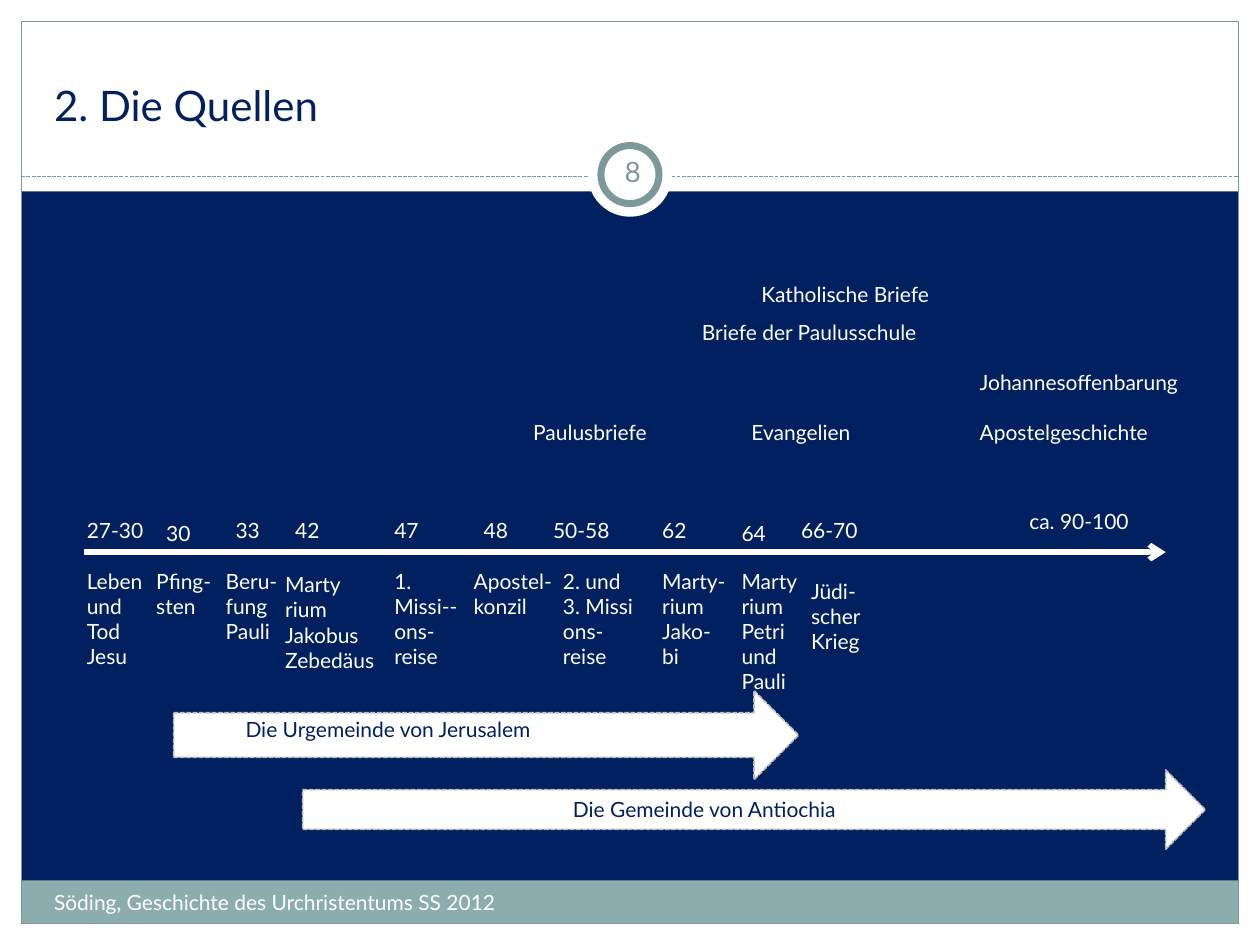
import pptx
import pptx.dml.color
import pptx.enum.dml
import pptx.enum.shapes
import pptx.enum.text
import pptx.oxml.ns
import pptx.util
from lxml import etree

Cm, Pt = pptx.util.Cm, pptx.util.Pt
SHAPE = pptx.enum.shapes.MSO_SHAPE
ANCHOR = pptx.enum.text.MSO_ANCHOR
ALIGN = pptx.enum.text.PP_ALIGN
DASH = pptx.enum.dml.MSO_LINE.SQUARE_DOT  # written to the file as sysDash

WIDTH, HEIGHT, MARGIN = 25.4, 19.05, 0.43
HEADER = 3.86
NAVY, WHITE, TEAL, SAGE, GREY = "002060", "FFFFFF", "7C999A", "8CADAE", "BDBDBD"

# left, top, width, text
YEARS = [
    (1.5, 10.31, 2.4, "27-30"),
    (3.1, 10.36, 1.4, "30"),
    (4.5, 10.31, 2.6, "33"),
    (5.7, 10.31, 1.4, "42"),
    (7.7, 10.31, 1.4, "47"),
    (9.5, 10.31, 2.2, "48"),
    (10.9, 10.31, 3.2, "50-58"),
    (13.1, 10.31, 4.2, "62"),
    (14.7, 10.36, 1.0, "64"),
    (15.9, 10.31, 2.0, "66-70"),
    (20.5, 10.13, 3.6, "ca. 90-100"),
]
WRITINGS = [
    (15.1, 5.56, 5.4, "Katholische Briefe"),
    (13.9, 6.32, 6.6, "Briefe der Paulusschule"),
    (19.5, 7.32, 4.8, "Johannesoffenbarung"),
    (10.5, 8.33, 6.4, "Paulusbriefe"),
    (14.9, 8.33, 4.0, "Evangelien"),
    (19.5, 8.33, 6.4, "Apostelgeschichte"),
]
# left, top, width, text, number of lines
EVENTS = [
    (1.5, 11.33, 1.8, "Leben und\nTod Jesu", 4),
    (2.9, 11.33, 1.8, "Pfing-\nsten", 2),
    (4.3, 11.33, 1.8, "Beru-\nfung\nPauli", 3),
    (5.5, 11.4, 2.4, "Marty\nrium Jakobus Zebedäus", 4),
    (7.7, 11.33, 2.2, "1.\nMissi--\nons-\nreise", 4),
    (9.3, 11.33, 2.6, "Apostel-konzil", 2),
    (11.1, 11.33, 2.2, "2. und\n3. Missi\nons-\nreise", 4),
    (13.1, 11.33, 2.2, "Marty-\nrium\nJako-\nbi", 4),
    (14.7, 11.33, 2.0, "Marty\nrium\nPetri\nund\nPauli", 5),
    (16.1, 11.53, 1.8, "Jüdi-scher Krieg", 3),
]
# arrow box, then label box
COMMUNITIES = [
    ((3.5, 13.92, 12.6, 1.8), (4.7, 14.33, 8.4, "Die Urgemeinde von Jerusalem")),
    ((6.1, 15.52, 18.2, 1.6), (11.3, 15.93, 6.0, "Die Gemeinde von Antiochia")),
]


def rgb(value):
    return pptx.dml.color.RGBColor.from_string(value)


class Slide:
    """Adds styled elements to one slide; all lengths are in centimetres."""

    font = "Lato"
    size = 12

    def __init__(self, s):
        self.s = s

    def background(self, color):
        fill = self.s.background.fill
        fill.solid()
        fill.fore_color.rgb = rgb(color)

    def stroke(self, line, color, width, dash=None):
        line.color.rgb = rgb(color)
        line.width = Pt(width)
        if dash is not None:
            line.dash_style = dash

    def shape(self, kind, x, y, w, h, fill=None, line=None, width=0.75, dash=None):
        sp = self.s.shapes.add_shape(kind, Cm(x), Cm(y), Cm(w), Cm(h))
        sp.shadow.inherit = False
        if fill:
            sp.fill.solid()
            sp.fill.fore_color.rgb = rgb(fill)
        else:
            sp.fill.background()
        if line:
            self.stroke(sp.line, line, width, dash)
        else:
            sp.line.fill.background()

    def line(self, x1, y1, x2, y2, color, width, dash=None, arrow=False):
        straight = pptx.enum.shapes.MSO_CONNECTOR.STRAIGHT
        cn = self.s.shapes.add_connector(straight, Cm(x1), Cm(y1), Cm(x2), Cm(y2))
        self.stroke(cn.line, color, width, dash)
        qn = pptx.oxml.ns.qn
        if arrow:
            etree.SubElement(cn.line._get_or_add_ln(), qn("a:tailEnd"), type="arrow")
        etree.SubElement(cn._element.spPr, qn("a:effectLst"))

    def text(self, x, y, w, text, lines=1, h=None, size=None, color=WHITE,
             anchor=ANCHOR.TOP, align=ALIGN.LEFT, inset=None):
        """Add a text box; without h its height follows from the line count."""
        height = h or 0.25 + 0.51 * lines
        sp = self.s.shapes.add_textbox(Cm(x), Cm(y), Cm(w), Cm(height))
        tf = sp.text_frame
        tf.word_wrap = True
        tf.vertical_anchor = anchor
        if h is None:
            tf.auto_size = pptx.enum.text.MSO_AUTO_SIZE.SHAPE_TO_FIT_TEXT
        if inset is not None:
            tf.margin_left = tf.margin_right = Cm(inset)
            tf.margin_top = tf.margin_bottom = Cm(inset)
        p = tf.paragraphs[0]
        p.alignment = align
        for i, part in enumerate(text.split("\n")):
            if i:
                p.add_line_break()
            r = p.add_run()
            r.text = part
            r.font.name = self.font
            r.font.size = Pt(size or self.size)
            r.font.color.rgb = rgb(color)


def draw_frame(slide):
    right, bottom = WIDTH - MARGIN, HEIGHT - MARGIN
    inner = WIDTH - 2 * MARGIN
    for box in [(0, bottom, WIDTH, MARGIN), (0, 0, WIDTH, HEADER),
                (0, 0, MARGIN, HEIGHT), (right, 0, MARGIN, HEIGHT)]:
        slide.shape(SHAPE.RECTANGLE, *box, fill=WHITE)
    slide.shape(SHAPE.RECTANGLE, MARGIN, 17.75, inner, bottom - 17.75, fill=SAGE)
    slide.shape(SHAPE.RECTANGLE, MARGIN, MARGIN, inner, HEIGHT - 2 * MARGIN, line=TEAL)
    slide.line(MARGIN, 3.56, right, 3.56, TEAL, 0.75, DASH)
    for size, line in [(1.7, None), (1.17, TEAL)]:
        slide.shape(SHAPE.OVAL, (WIDTH - size) / 2, 3.52 - size / 2, size, size,
                    fill=WHITE, line=line, width=4)
    slide.text(0.84, 0.64, 23.7, "2. Die Quellen", h=2.11, size=24, color=NAVY,
               anchor=ANCHOR.BOTTOM)
    slide.text(0.84, 17.81, 9.96, "Söding, Geschichte des Urchristentums SS 2012", h=1.02)
    slide.text(12.12, 2.84, 1.27, "8", h=1.22, size=16, color=TEAL,
               anchor=ANCHOR.MIDDLE, align=ALIGN.CENTER, inset=0.13)


def main():
    prs = pptx.Presentation()
    prs.slide_width, prs.slide_height = Cm(WIDTH), Cm(HEIGHT)
    slide = Slide(prs.slides.add_slide(prs.slide_layouts[6]))
    slide.background(NAVY)
    draw_frame(slide)
    slide.line(1.7, 11.13, 23.5, 11.13, WHITE, 3, arrow=True)
    for label in YEARS + WRITINGS + EVENTS:
        slide.text(*label)
    for arrow, label in COMMUNITIES:
        slide.shape(SHAPE.RIGHT_ARROW, *arrow, fill=WHITE, line=GREY, width=0.9, dash=DASH)
        slide.text(*label, color=NAVY)
    prs.save("out.pptx")


if __name__ == "__main__":
    main()
